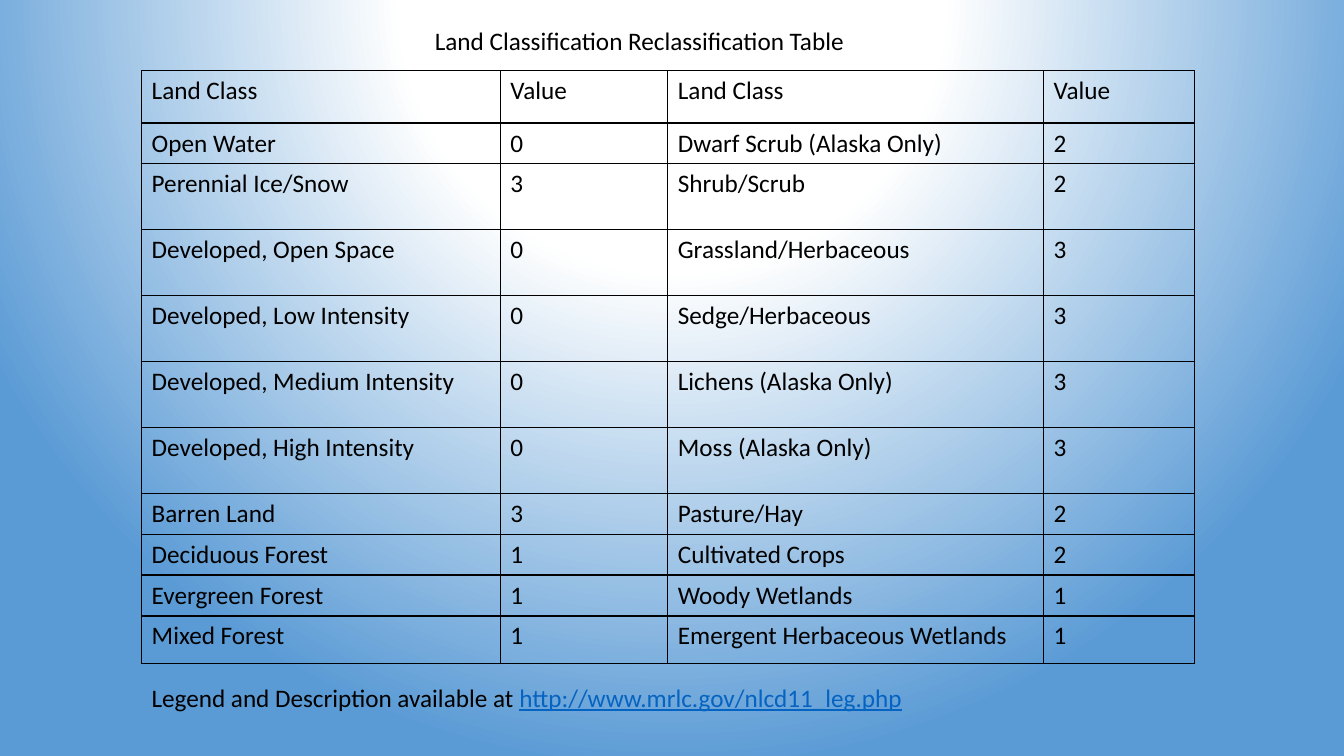
import pptx
import pptx.dml.color
import pptx.enum.text
import pptx.oxml
import pptx.oxml.ns
import pptx.util
from pptx.util import Cm

BLACK = pptx.dml.color.RGBColor(0x00, 0x00, 0x00)
WHITE = pptx.dml.color.RGBColor(0xFF, 0xFF, 0xFF)
SKY = pptx.dml.color.RGBColor(0x5B, 0x9B, 0xD5)
LINK = pptx.dml.color.RGBColor(0x05, 0x63, 0xC1)

COLUMN_WIDTHS = (9.04, 4.22, 9.47, 3.81)
SHORT, TALL = 1.03, 1.66
ROW_HEIGHTS = [1.32, SHORT] + [TALL] * 5 + [SHORT] * 3 + [1.19]

LAND_CLASSES = [
    ("Land Class", "Value", "Land Class", "Value"),
    ("Open Water", "0", "Dwarf Scrub (Alaska Only)", "2"),
    ("Perennial Ice/Snow", "3", "Shrub/Scrub", "2"),
    ("Developed, Open Space", "0", "Grassland/Herbaceous", "3"),
    ("Developed, Low Intensity", "0", "Sedge/Herbaceous", "3"),
    ("Developed, Medium Intensity", "0", "Lichens (Alaska Only)", "3"),
    ("Developed, High Intensity", "0", "Moss (Alaska Only)", "3"),
    ("Barren Land", "3", "Pasture/Hay", "2"),
    ("Deciduous Forest", "1", "Cultivated Crops", "2"),
    ("Evergreen Forest", "1", "Woody Wetlands", "1"),
    ("Mixed Forest", "1", "Emergent Herbaceous Wetlands", "1"),
]


def paint_background(slide):
    slide.background.fill.solid()
    plain = slide.element.find(".//" + pptx.oxml.ns.qn("a:solidFill"))
    stops = "".join(
        f'<a:gs pos="{position * 1000}"><a:srgbClr val="{color}"/></a:gs>'
        for position, color in ((0, WHITE), (35, WHITE), (100, SKY))
    )
    glow = pptx.oxml.parse_xml(
        f'<a:gradFill {pptx.oxml.ns.nsdecls("a")} rotWithShape="1">'
        f"<a:gsLst>{stops}</a:gsLst>"
        '<a:path path="circle">'
        '<a:fillToRect l="50000" t="-80000" r="50000" b="180000"/>'
        "</a:path></a:gradFill>"
    )
    plain.getparent().replace(plain, glow)


def add_run(paragraph, text, color=BLACK, underline=None):
    run = paragraph.add_run()
    run.text = text
    run.font.name = "Calibri"
    run.font.size = pptx.util.Pt(18)
    run.font.color.rgb = color
    run.font.underline = underline


def add_borders(cell):
    properties = cell._tc.get_or_add_tcPr()
    for index, side in enumerate(("lnL", "lnR", "lnT", "lnB")):
        border = pptx.oxml.parse_xml(
            f'<a:{side} {pptx.oxml.ns.nsdecls("a")} w="12700">'
            f'<a:solidFill><a:srgbClr val="{BLACK}"/></a:solidFill></a:{side}>'
        )
        properties.insert(index, border)


def add_class_table(slide, left, top):
    table = slide.shapes.add_table(
        len(LAND_CLASSES), len(COLUMN_WIDTHS), Cm(left), Cm(top),
        Cm(sum(COLUMN_WIDTHS)), Cm(sum(ROW_HEIGHTS)),
    ).table
    table.first_row = False
    table.horz_banding = False
    for column, width in zip(table.columns, COLUMN_WIDTHS):
        column.width = Cm(width)
    for row, height, entries in zip(table.rows, ROW_HEIGHTS, LAND_CLASSES):
        row.height = Cm(height)
        for cell, entry in zip(row.cells, entries):
            cell.fill.background()
            add_borders(cell)
            add_run(cell.text_frame.paragraphs[0], entry)


def add_text(slide, left, top, width, height):
    frame = slide.shapes.add_textbox(Cm(left), Cm(top), Cm(width), Cm(height)).text_frame
    frame.word_wrap = True
    frame.auto_size = pptx.enum.text.MSO_AUTO_SIZE.SHAPE_TO_FIT_TEXT
    return frame.paragraphs[0]


def main():
    presentation = pptx.Presentation()
    presentation.slide_width = Cm(33.87)
    presentation.slide_height = Cm(19.05)
    slide = presentation.slides.add_slide(presentation.slide_layouts[6])
    paint_background(slide)

    add_class_table(slide, 3.57, 1.78)

    legend = add_text(slide, 3.57, 17.07, 20.52, 1.8)
    add_run(legend, "Legend and Description available at ")
    add_run(legend, "http://www.mrlc.gov/nlcd11_leg.php", LINK, True)

    title = add_text(slide, 10.71, 0.52, 11.13, 1.03)
    add_run(title, "Land Classification Reclassification Table")

    presentation.save("out.pptx")


if __name__ == "__main__":
    main()
